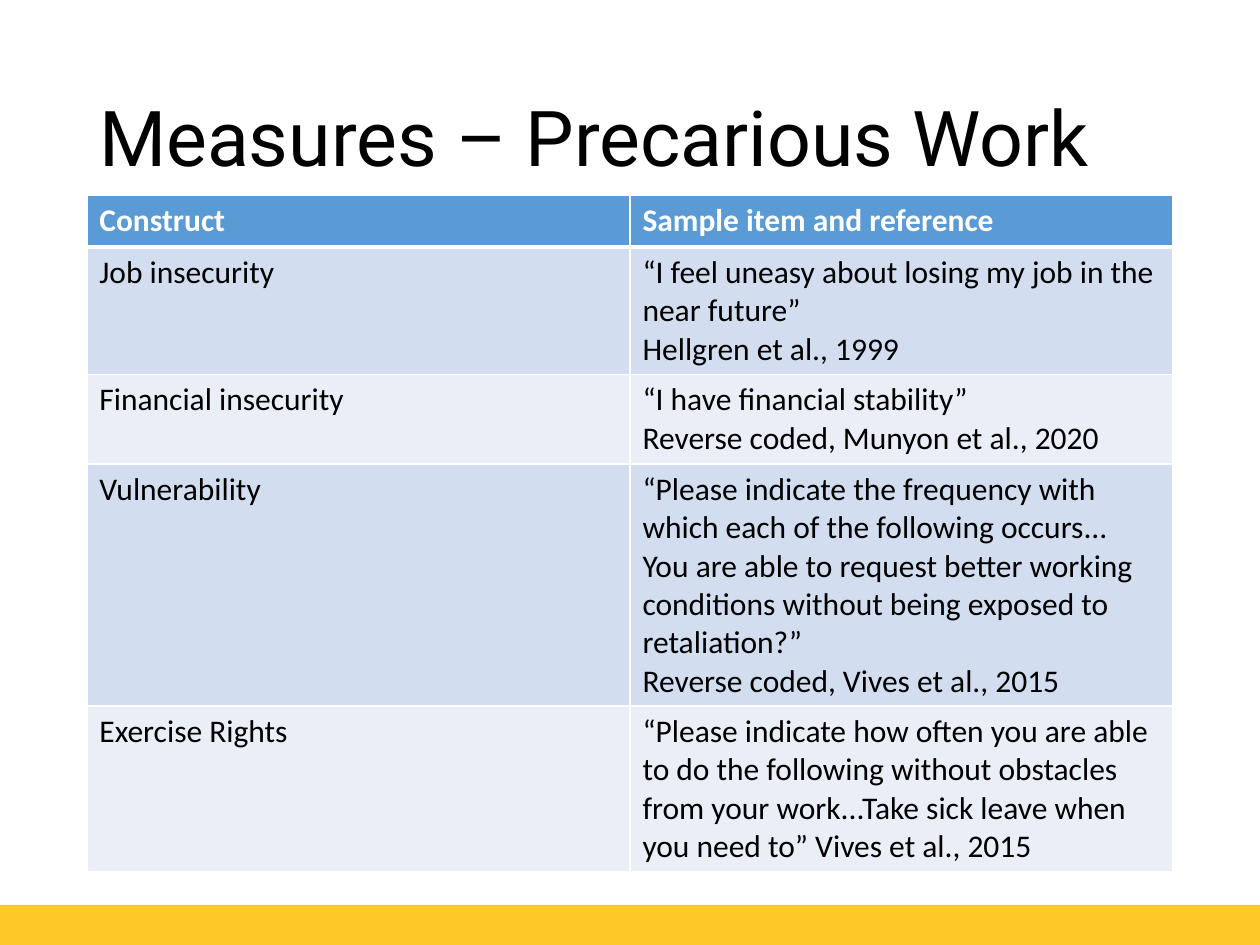
import pptx
import pptx.util
import pptx.dml.color
import pptx.enum.shapes
import pptx.enum.text
import pptx.oxml
import pptx.oxml.ns
from pptx.util import Cm, Pt

TITLE = "Measures – Precarious Work"
ROWS = [
    (1.04, "Construct", ["Sample item and reference"]),
    (2.57, "Job insecurity", [
        "“I feel uneasy about losing my job in the near future”",
        "Hellgren et al., 1999"]),
    (1.8, "Financial insecurity", [
        "“I have financial stability”",
        "Reverse coded, Munyon et al., 2020"]),
    (4.88, "Vulnerability", [
        "“Please indicate the frequency with which each of the following occurs... "
        "You are able to request better working conditions without being exposed to retaliation?”",
        "Reverse coded, Vives et al., 2015"]),
    (3.34, "Exercise Rights", [
        "“Please indicate how often you are able to do the following without obstacles "
        "from your work...Take sick leave when you need to” Vives et al., 2015"]),
]
WIDTH, HEIGHT = 25.4, 19.05
LEFT, TABLE_TOP, COL_WIDTH = 1.75, 3.94, 10.95
BAR_HEIGHT = 0.81
HEADER_FILL, BAND_FILLS = "5B9BD5", ["D2DEEF", "EAEFF7"]
TITLE_FONT = {"name": "Roboto", "size": Pt(44), "bold": False}
HEADER_FONT = {"name": "Calibri", "size": Pt(18), "bold": True}
BODY_FONT = {**HEADER_FONT, "bold": False}


def rgb(value):
    return pptx.dml.color.RGBColor.from_string(value)


def write(tf, lines, font, color):
    for i, text in enumerate(lines):
        p = tf.paragraphs[0] if i == 0 else tf.add_paragraph()
        r = p.add_run()
        r.text = text
        for key, value in font.items():
            setattr(r.font, key, value)
        r.font.color.rgb = rgb(color)


def set_borders(cell, widths):
    tc_pr = cell._tc.get_or_add_tcPr()
    for side, width in widths.items():
        tc_pr.append(pptx.oxml.parse_xml(
            f'<a:ln{side} {pptx.oxml.ns.nsdecls("a")} w="{Pt(width)}">'
            '<a:solidFill><a:srgbClr val="FFFFFF"/></a:solidFill>'
            f'</a:ln{side}>'))


prs = pptx.Presentation()
prs.slide_width, prs.slide_height = Cm(WIDTH), Cm(HEIGHT)
s = prs.slides.add_slide(prs.slide_layouts[6])

bar = s.shapes.add_shape(
    pptx.enum.shapes.MSO_SHAPE.RECTANGLE,
    Cm(0), Cm(HEIGHT - BAR_HEIGHT), Cm(WIDTH), Cm(BAR_HEIGHT))
bar.shadow.inherit = False
bar.fill.solid()
bar.fill.fore_color.rgb = rgb("FFCA29")
bar.line.fill.background()

title = s.shapes.add_textbox(Cm(LEFT), Cm(1.02), Cm(2 * COL_WIDTH), Cm(3.68))
tf = title.text_frame
tf.word_wrap = True
tf.vertical_anchor = pptx.enum.text.MSO_ANCHOR.MIDDLE
write(tf, [TITLE], TITLE_FONT, "000000")
tf.paragraphs[0].line_spacing = 0.9

table = s.shapes.add_table(
    len(ROWS), 2, Cm(LEFT), Cm(TABLE_TOP),
    Cm(2 * COL_WIDTH), Cm(sum(row[0] for row in ROWS))).table
for column in table.columns:
    column.width = Cm(COL_WIDTH)
for i, (height, construct, sample) in enumerate(ROWS):
    table.rows[i].height = Cm(height)
    header = i == 0
    for j, lines in enumerate([[construct], sample]):
        cell = table.cell(i, j)
        set_borders(cell, {"L": 1, "R": 1, "T": 3 if i == 1 else 1, "B": 3 if header else 1})
        cell.fill.solid()
        cell.fill.fore_color.rgb = rgb(HEADER_FILL if header else BAND_FILLS[(i - 1) % 2])
        write(cell.text_frame, lines, HEADER_FONT if header else BODY_FONT,
              "FFFFFF" if header else "000000")

prs.save("out.pptx")
